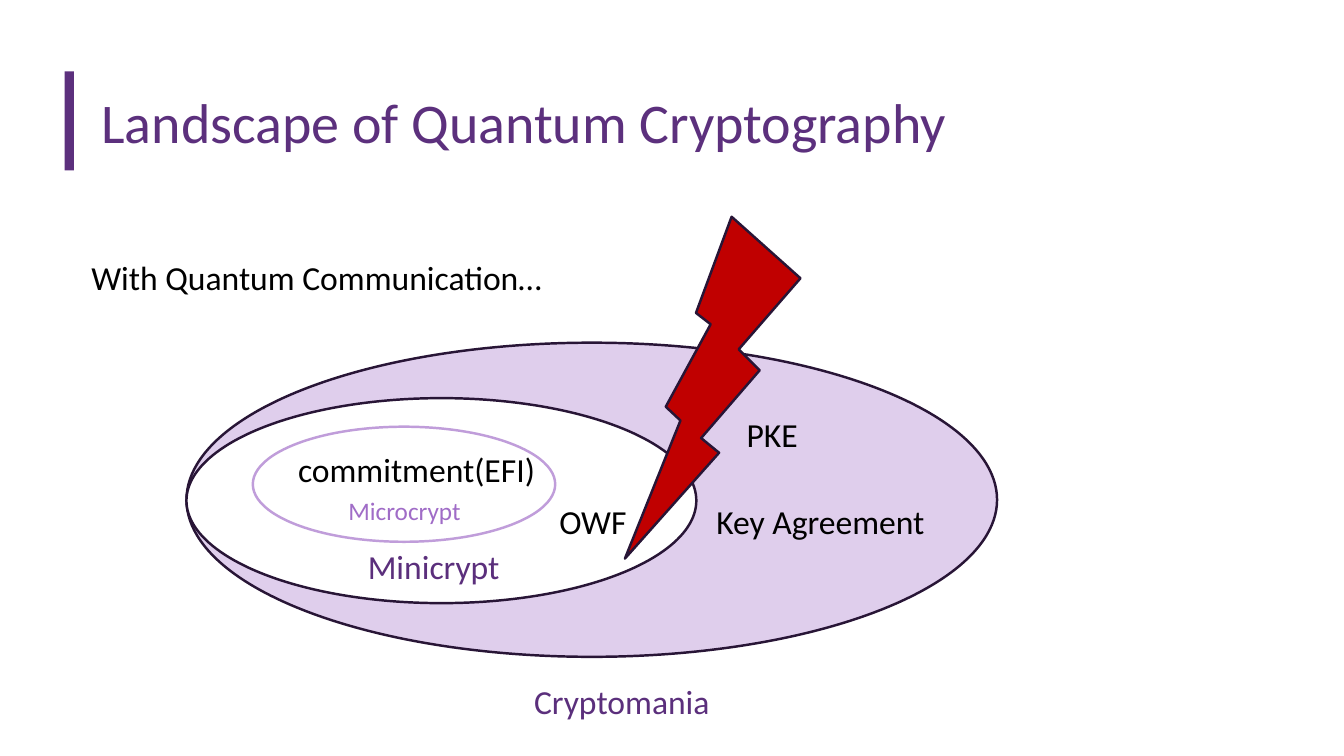
import pptx
import pptx.dml.color
import pptx.enum.shapes
import pptx.enum.text
import pptx.util

COLORS = {
    "title": "5C307D", "class": "5B2F7C", "microcrypt": "A06CC7",
    "microcrypt_ring": "C09DDA", "cryptomania": "DFCEEC", "outline": "281536",
    "bolt": "C00000", "minicrypt": "FFFFFF", "text": "000000",
}
SHAPES = pptx.enum.shapes.MSO_SHAPE
TEXT = pptx.enum.text

deck = pptx.Presentation()
deck.slide_width = pptx.util.Inches(13.333)
deck.slide_height = pptx.util.Inches(7.5)
slide = deck.slides.add_slide(deck.slide_layouts[6])

# Grid of 160 columns by 90 rows
COL = deck.slide_width / 160
ROW = deck.slide_height / 90


def add_figure(preset, left, top, width, height, fill, line):
    figure = slide.shapes.add_shape(
        preset, int(left * COL), int(top * ROW), int(width * COL), int(height * ROW))
    figure.shadow.inherit = False
    if fill:
        figure.fill.solid()
        figure.fill.fore_color.rgb = pptx.dml.color.RGBColor.from_string(COLORS[fill])
    else:
        figure.fill.background()
    if line:
        figure.line.color.rgb = pptx.dml.color.RGBColor.from_string(COLORS[line])
        figure.line.width = pptx.util.Pt(1.75)
    else:
        figure.line.fill.background()
    return figure


def add_label(words, left, top, width, height=6, size=24, color="text"):
    label = slide.shapes.add_textbox(
        int(left * COL), int(top * ROW), int(width * COL), int(height * ROW))
    frame = label.text_frame
    frame.word_wrap = True
    run = frame.paragraphs[0].add_run()
    run.text = words
    run.font.name = "Calibri"
    run.font.size = pptx.util.Pt(size)
    run.font.color.rgb = pptx.dml.color.RGBColor.from_string(COLORS[color])
    return frame


# Title with its accent bar
accent_bar = add_figure(SHAPES.ROUNDED_RECTANGLE, 7.7, 8.5, 1.1, 11.8, "title", None)
accent_bar.adjustments[0] = 0
title = add_label("Landscape of Quantum Cryptography", 10.9, 7.8, 138.1, 13.3, 40, "title")
title.vertical_anchor = TEXT.MSO_ANCHOR.MIDDLE

# Nested worlds, from the widest to the narrowest
for left, top, width, height, fill, line in [
    (22.2, 40.8, 96.5, 37.4, "cryptomania", "outline"),
    (22.2, 47.4, 60.7, 24.4, "minicrypt", "outline"),
    (30.1, 50.8, 36, 13.7, None, "microcrypt_ring"),
]:
    add_figure(SHAPES.OVAL, left, top, width, height, fill, line)

# Primitives and the names of the worlds
for words, left, top, width, height, size, color in [
    ("commitment(EFI)", 34.3, 52.9, 34.2, 6, 24, "text"),
    ("PKE", 87.7, 48.7, 13.1, 6, 24, "text"),
    ("Minicrypt", 42.6, 64.4, 19.3, 6, 24, "class"),
    ("OWF", 65.4, 59, 13.1, 6, 24, "text"),
    ("Key Agreement", 84.1, 59, 37.9, 6, 24, "text"),
    ("Cryptomania", 62.4, 80.5, 28.6, 6, 24, "class"),
    ("Microcrypt", 40.3, 58.4, 30.2, 4.8, 18, "microcrypt"),
    ("With Quantum Communication…", 9.7, 30, 60.7, 6, 24, "text"),
]:
    label = add_label(words, left, top, width, height, size, color)
    label.auto_size = TEXT.MSO_AUTO_SIZE.SHAPE_TO_FIT_TEXT

# Bolt separating the two worlds, mirrored to point down and left
bolt = add_figure(SHAPES.LIGHTNING_BOLT, 74.4, 25.8, 20.9, 40.7, "bolt", "outline")
bolt.element.spPr.xfrm.set("flipH", "1")

deck.save("out.pptx")
